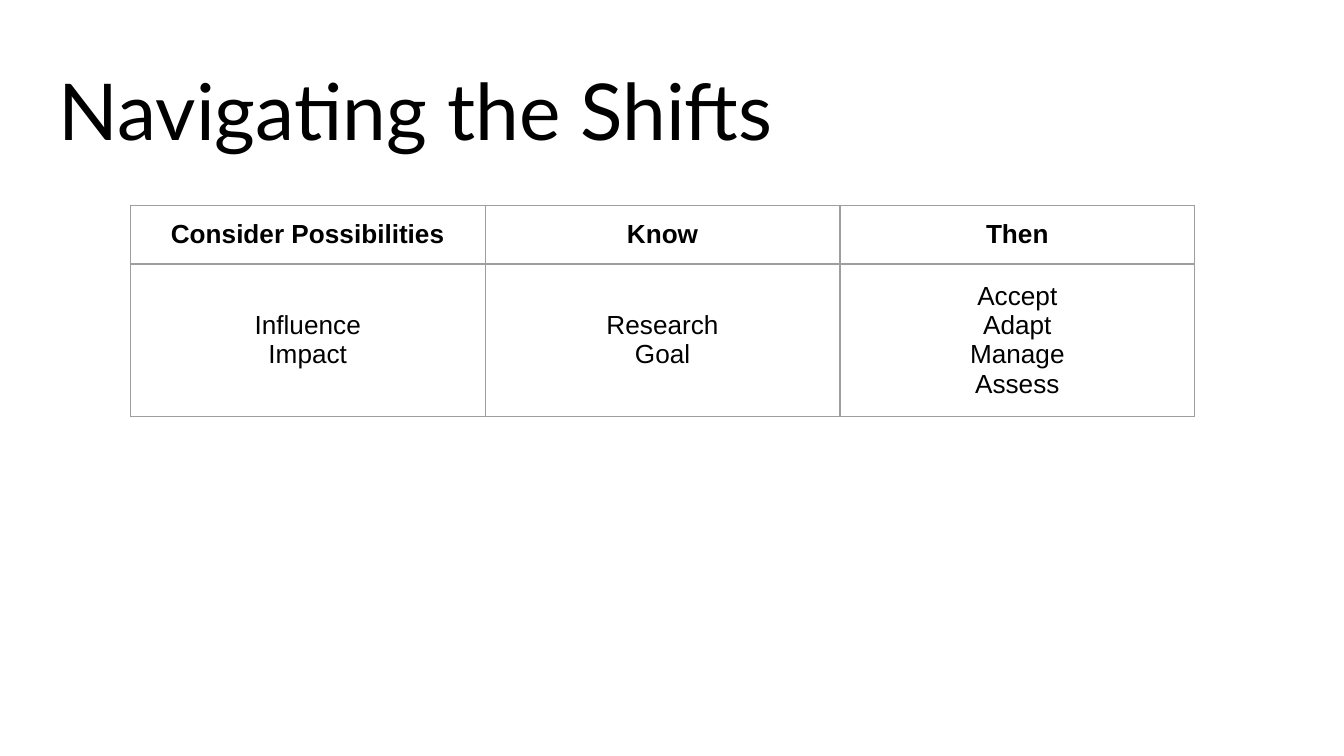
from lxml.etree import SubElement
from pptx import Presentation
from pptx.dml.color import RGBColor
from pptx.enum.text import MSO_ANCHOR, PP_ALIGN
from pptx.oxml.ns import qn
from pptx.util import Inches, Pt

BLACK = RGBColor(0x00, 0x00, 0x00)
GRAY = RGBColor(0x9E, 0x9E, 0x9E)
MARGIN = Inches(0.1)
COLUMN_WIDTH = Inches(2.64)
ROW_HEIGHT = Inches(0.42)
ROWS = [
    [["Consider Possibilities"], ["Know"], ["Then"]],
    [["Influence", "Impact"], ["Research", "Goal"],
     ["Accept", "Adapt", "Manage", "Assess"]],
]


def write_text(frame, lines, font="Arial", size=14, bold=False, align=PP_ALIGN.CENTER):
    """Write each line as one formatted paragraph."""
    for index, line in enumerate(lines):
        para = frame.add_paragraph() if index else frame.paragraphs[0]
        para.alignment = align
        span = para.add_run()
        span.text = line
        span.font.name = font
        span.font.size = Pt(size)
        span.font.bold = bold
        span.font.color.rgb = BLACK


def set_margins(holder):
    """Give a text frame or a table cell equal margins."""
    holder.margin_left = holder.margin_right = MARGIN
    holder.margin_top = holder.margin_bottom = MARGIN


def add_title(page, text):
    """Add the heading, resting on the bottom of its box."""
    box = page.shapes.add_textbox(Inches(0.34), Inches(0.35), Inches(9.32), Inches(0.91))
    frame = box.text_frame
    frame.word_wrap = True
    frame.vertical_anchor = MSO_ANCHOR.BOTTOM
    set_margins(frame)
    write_text(frame, [text], font="Lato", size=42, align=PP_ALIGN.LEFT)


def set_borders(cell):
    """Draw a thin gray line on all four sides of a cell."""
    properties = cell._tc.get_or_add_tcPr()
    for position, side in enumerate(("a:lnL", "a:lnR", "a:lnT", "a:lnB")):
        line = SubElement(properties, qn(side), w=str(Pt(0.75)))
        fill = SubElement(line, qn("a:solidFill"))
        SubElement(fill, qn("a:srgbClr"), val=str(GRAY))
        properties.insert(position, line)


def add_shifts_table(page):
    """Add the bordered table with a bold heading row."""
    columns = len(ROWS[0])
    table = page.shapes.add_table(
        len(ROWS), columns, Inches(0.97), Inches(1.53),
        COLUMN_WIDTH * columns, ROW_HEIGHT * len(ROWS)).table
    table.first_row = table.horz_banding = False
    for row_index, row in enumerate(ROWS):
        for column_index, lines in enumerate(row):
            cell = table.cell(row_index, column_index)
            cell.fill.background()
            cell.vertical_anchor = MSO_ANCHOR.MIDDLE
            set_margins(cell)
            set_borders(cell)
            write_text(cell.text_frame, lines, bold=row_index == 0)


def main():
    """Build and save the slide."""
    deck = Presentation()
    deck.slide_width = Inches(10)
    deck.slide_height = deck.slide_width * 9 // 16
    page = deck.slides.add_slide(deck.slide_layouts[6])
    add_title(page, "Navigating the Shifts")
    add_shifts_table(page)
    deck.save("out.pptx")


if __name__ == "__main__":
    main()
